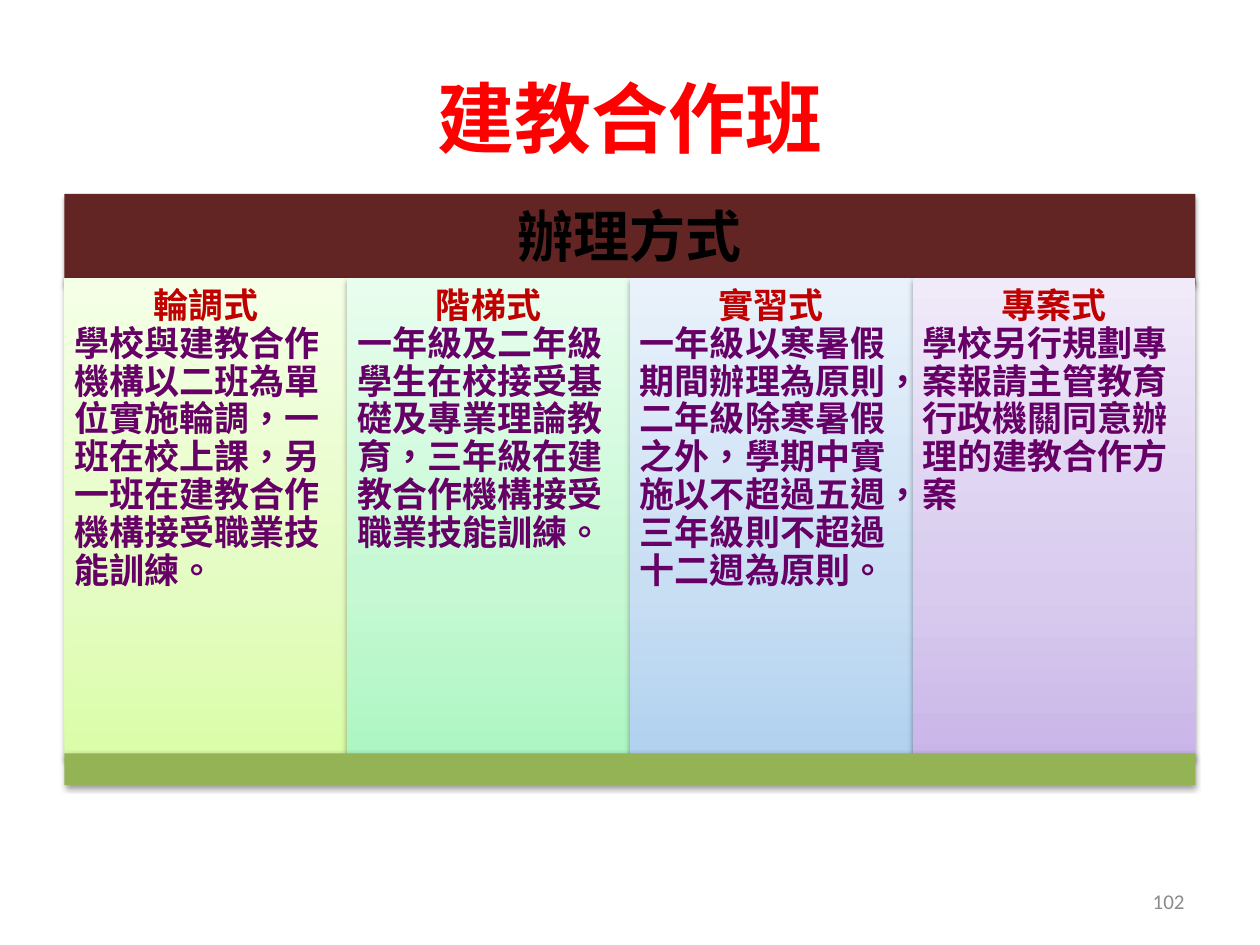
from copy import deepcopy
from dataclasses import dataclass

from lxml import etree
from pptx import Presentation
from pptx.dml.color import RGBColor
from pptx.enum.shapes import MSO_SHAPE
from pptx.enum.text import MSO_ANCHOR, PP_ALIGN
from pptx.oxml.ns import qn
from pptx.shapes.autoshape import Shape
from pptx.slide import Slide
from pptx.text.text import TextFrame, _Paragraph
from pptx.util import Cm, Pt

RECTANGLE = MSO_SHAPE.RECTANGLE
CENTER, LEFT, RIGHT = PP_ALIGN.CENTER, PP_ALIGN.LEFT, PP_ALIGN.RIGHT
MIDDLE, TOP = MSO_ANCHOR.MIDDLE, MSO_ANCHOR.TOP


@dataclass(frozen=True)
class Theme:
    latin_font: str = "Calibri"
    chinese_font: str = "Noto Sans CJK SC"
    title_color: str = "FF0000"
    header_fill: str = "632523"
    header_color: str = "000000"
    heading_color: str = "C00000"
    body_color: str = "660066"
    footer_fill: str = "94B355"
    number_color: str = "8C8C8C"
    title_size: int = 44
    header_size: int = 32
    body_size: int = 20
    number_size: int = 12
    gradient_positions: tuple[float, ...] = (0, 0.35, 1)


@dataclass(frozen=True)
class Area:
    left: float
    top: float
    width: float
    height: float

    def lengths(self) -> tuple[Cm, Cm, Cm, Cm]:
        return Cm(self.left), Cm(self.top), Cm(self.width), Cm(self.height)


@dataclass(frozen=True)
class Mode:
    heading: str
    description: str
    gradient: tuple[str, str, str]


THEME = Theme()
TABLE_LEFT, TABLE_WIDTH = 1.3, 22.8
MODES = (
    Mode("輪調式",
         "學校與建教合作機構以二班為單位實施輪調，一班在校上課，另一班在建教合作機構接受職業技能訓練。",
         ("DAFDA7", "E4FCC2", "F5FFE7")),
    Mode("階梯式",
         "一年級及二年級學生在校接受基礎及專業理論教育，三年級在建教合作機構接受職業技能訓練。",
         ("ACF6C1", "C5F8D3", "E8FDEE")),
    Mode("實習式",
         "一年級以寒暑假期間辦理為原則，二年級除寒暑假之外，學期中實施以不超過五週，三年級則不超過十二週為原則。",
         ("B0D1EF", "C8DEF3", "E9F2FB")),
    Mode("專案式",
         "學校另行規劃專案報請主管教育行政機關同意辦理的建教合作方案",
         ("C9B5E8", "D8CBEE", "F0EAF9")),
)


def write(para: _Paragraph, text: str, size: int, color: str, align: PP_ALIGN,
          font_name: str, bold: bool = True) -> None:
    para.text = text
    para.alignment = align
    for span in para.runs:
        span.font.size = Pt(size)
        span.font.bold = bold
        span.font.color.rgb = RGBColor.from_string(color)
        span.font.name = font_name
        properties = span.font._element
        properties.set("lang", "zh-TW")
        properties.set("altLang", "en-US")
        etree.SubElement(properties, qn("a:ea"), typeface=THEME.chinese_font)


def set_frame(frame: TextFrame, margin: float, anchor: MSO_ANCHOR) -> None:
    frame.word_wrap = True
    frame.vertical_anchor = anchor
    frame.margin_left = frame.margin_right = Cm(margin)
    frame.margin_top = frame.margin_bottom = Cm(margin)


def add_shadow(shape: Shape) -> None:
    shape.shadow.inherit = False
    effects = shape._element.spPr.find(qn("a:effectLst"))
    shadow = etree.SubElement(effects, qn("a:outerShdw"), blurRad=str(Pt(3.1)),
                              dist=str(Pt(1.6)), dir="5400000", rotWithShape="0")
    color = etree.SubElement(shadow, qn("a:srgbClr"), val="000000")
    etree.SubElement(color, qn("a:alpha"), val="38000")


def add_panel(slide: Slide, area: Area, colors: tuple[str, ...]) -> Shape:
    panel = slide.shapes.add_shape(RECTANGLE, *area.lengths())
    if len(colors) == 1:
        panel.fill.solid()
        panel.fill.fore_color.rgb = RGBColor.from_string(colors[0])
    else:
        panel.fill.gradient()
        panel.fill.gradient_angle = 90
        stops = panel._element.spPr.find(".//" + qn("a:gsLst"))
        stops.append(deepcopy(stops[-1]))
        for stop, color, position in zip(panel.fill.gradient_stops, colors,
                                         THEME.gradient_positions):
            stop.color.rgb = RGBColor.from_string(color)
            stop.position = position
    panel.line.fill.background()
    add_shadow(panel)
    return panel


def add_mode(slide: Slide, area: Area, mode: Mode) -> None:
    frame = add_panel(slide, area, mode.gradient).text_frame
    set_frame(frame, 0.2, TOP)
    heading, body = frame.paragraphs[0], frame.add_paragraph()
    write(heading, mode.heading, THEME.body_size, THEME.heading_color, CENTER,
          THEME.chinese_font)
    write(body, mode.description, THEME.body_size, THEME.body_color, LEFT,
          THEME.chinese_font)
    for para in (heading, body):
        para.line_spacing = 0.9


def main() -> None:
    deck = Presentation()
    deck.slide_width, deck.slide_height = Cm(25.4), Cm(19.05)
    page = deck.slides.add_slide(deck.slide_layouts[5])

    title = page.shapes.title
    title.left, title.top, title.width, title.height = Area(1.27, 0.76, 22.86, 3.18).lengths()
    title.text_frame.vertical_anchor = MIDDLE
    write(title.text_frame.paragraphs[0], "建教合作班", THEME.title_size,
          THEME.title_color, CENTER, THEME.latin_font)

    header = add_panel(page, Area(TABLE_LEFT, 3.91, TABLE_WIDTH, 1.83), (THEME.header_fill,))
    set_frame(header.text_frame, 0.33, MIDDLE)
    header_para = header.text_frame.paragraphs[0]
    write(header_para, "辦理方式", THEME.header_size, THEME.header_color, CENTER,
          THEME.chinese_font)
    header_para.line_spacing = 0.9

    column_width = TABLE_WIDTH / len(MODES)
    for index, mode in enumerate(MODES):
        add_mode(page, Area(TABLE_LEFT + index * column_width, 5.61, column_width, 9.7), mode)

    add_panel(page, Area(TABLE_LEFT, 15.19, TABLE_WIDTH, 0.64), (THEME.footer_fill,))

    number = page.shapes.add_textbox(*Area(18.2, 17.66, 5.93, 1.01).lengths())
    number.text_frame.word_wrap = True
    number.text_frame.vertical_anchor = MIDDLE
    write(number.text_frame.paragraphs[0], "102", THEME.number_size,
          THEME.number_color, RIGHT, THEME.latin_font, bold=False)

    deck.save("out.pptx")


if __name__ == "__main__":
    main()
